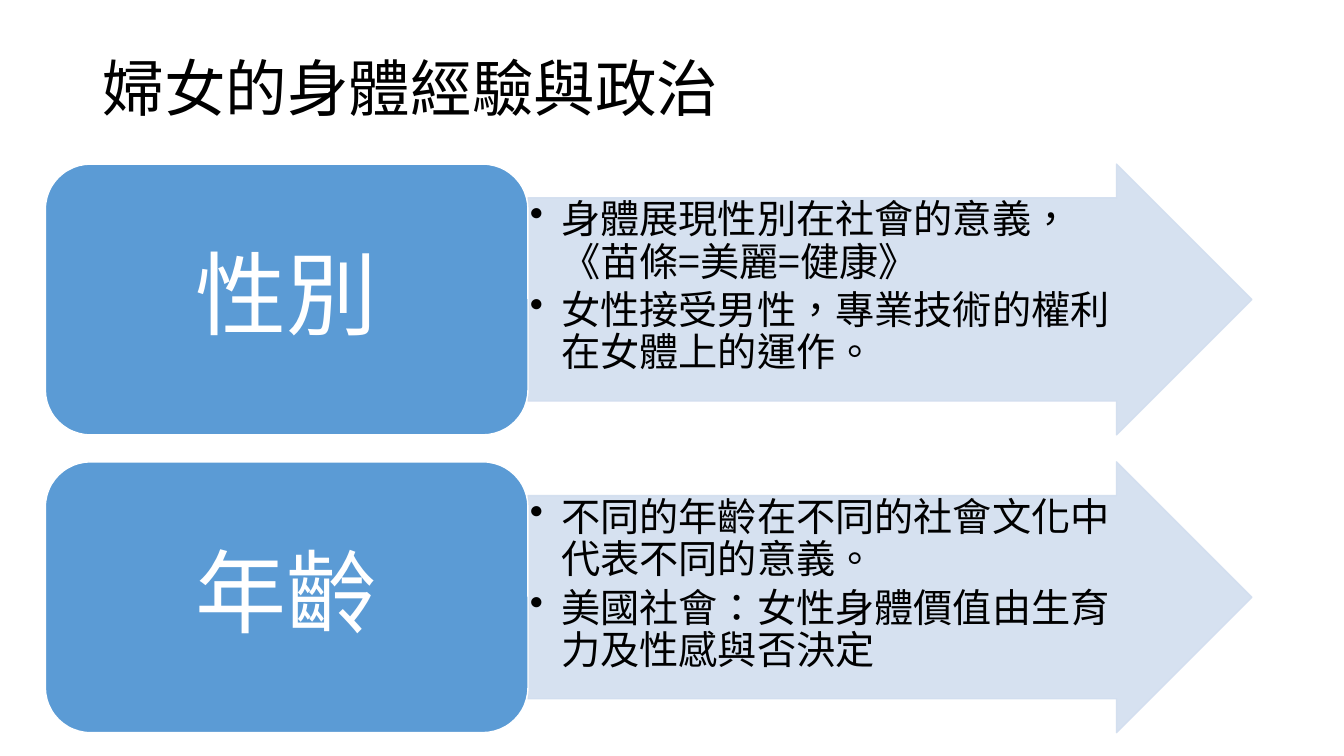
from pptx import Presentation
from pptx import util as u
from pptx.dml import color
from pptx.enum import shapes, text
from pptx.oxml import ns, xmlchemy

Pt = u.Pt
BLACK = color.RGBColor(0x00, 0x00, 0x00)
WHITE = color.RGBColor(0xFF, 0xFF, 0xFF)
BLUE = color.RGBColor(0x5B, 0x9B, 0xD5)
PALE_BLUE = color.RGBColor(0xD2, 0xDE, 0xEF)
FONT = "Noto Sans CJK SC"

TOPICS = [
    ("性別", ["身體展現性別在社會的意義，《苗條=美麗=健康》",
             "女性接受男性，專業技術的權利在女體上的運作。"]),
    ("年齡", ["不同的年齡在不同的社會文化中代表不同的意義。",
             "美國社會：女性身體價值由生育力及性感與否決定"]),
]


def add_child(parent, tag, **attributes):
    """Append an XML element with the given attributes."""
    element = xmlchemy.OxmlElement(tag)
    for name, value in attributes.items():
        element.set(name, value)
    parent.append(element)


def write_text(frame, paragraphs, size, ink=BLACK, align=text.PP_ALIGN.LEFT,
               anchor=text.MSO_ANCHOR.MIDDLE, margins=(7.2, 3.6), after=0, indent=0):
    """Fill a text frame with paragraphs, bulleted when an indent is given."""
    frame.word_wrap = True
    frame.auto_size = text.MSO_AUTO_SIZE.NONE
    frame.vertical_anchor = anchor
    frame.margin_left = frame.margin_right = Pt(margins[0])
    frame.margin_top = frame.margin_bottom = Pt(margins[1])
    for index, words in enumerate(paragraphs):
        paragraph = frame.add_paragraph() if index else frame.paragraphs[0]
        paragraph.alignment = align
        paragraph.line_spacing = 0.9
        paragraph.space_before = Pt(0)
        paragraph.space_after = Pt(after)
        if indent:
            properties = paragraph._p.get_or_add_pPr()
            properties.set("marL", str(Pt(indent)))
            properties.set("indent", str(-Pt(indent)))
            add_child(properties, "a:buChar", char="•")
        run = paragraph.add_run()
        run.text = words
        run.font.size = Pt(size)
        run.font.name = FONT
        run.font.color.rgb = ink
        properties = run._r.get_or_add_rPr()
        properties.set("lang", "zh-TW")
        add_child(properties, "a:ea", typeface=FONT)


def add_block(slide, kind, box, fill, line, opacity=100):
    """Add a filled and outlined preset shape."""
    shape = slide.shapes.add_shape(kind, *map(Pt, box))
    shape.shadow.inherit = False
    shape.fill.solid()
    shape.fill.fore_color.rgb = fill
    shape.line.color.rgb = line
    shape.line.width = Pt(1)
    if opacity < 100:
        for paint in shape._element.spPr.iter(ns.qn("a:srgbClr")):
            add_child(paint, "a:alpha", val=str(opacity * 1000))
    return shape


def add_title(slide, box, words):
    """Place the title placeholder in its box."""
    title = slide.shapes.title
    title.left, title.top, title.width, title.height = map(Pt, box)
    write_text(title.text_frame, [words], 44)


def add_topic(slide, box, label, points):
    """Draw a labelled block with an arrow that carries its points."""
    left, top, width, height = box
    label_width = width * 0.4
    arrow_left, arrow_width = left + label_width, width - label_width
    arrow = add_block(slide, shapes.MSO_SHAPE.RIGHT_ARROW,
                      (arrow_left, top, arrow_width, height), PALE_BLUE, PALE_BLUE, 90)
    arrow.adjustments[0], arrow.adjustments[1] = 0.75, 0.5
    points_box = (arrow_left, top + height / 8, arrow_width - height * 0.375, height * 0.75)
    write_text(slide.shapes.add_textbox(*map(Pt, points_box)).text_frame, points, 28,
               anchor=text.MSO_ANCHOR.TOP, margins=(1.4, 1.4), after=4.2, indent=22.5)
    block = add_block(slide, shapes.MSO_SHAPE.ROUNDED_RECTANGLE,
                      (left, top, label_width, height), BLUE, WHITE)
    write_text(block.text_frame, [label], 65, ink=WHITE,
               align=text.PP_ALIGN.CENTER, margins=(19.5, 9.75))


def main():
    """Build the slide and save it."""
    presentation = Presentation()
    presentation.slide_width, presentation.slide_height = Pt(960), Pt(540)
    slide = presentation.slides.add_slide(presentation.slide_layouts[5])
    add_title(slide, (66, 13, 828, 104.4), "婦女的身體經驗與政治")
    for row, (label, points) in enumerate(TOPICS):
        add_topic(slide, (32.4, 117.2 + row * 212.7, 861.8, 193.4), label, points)
    presentation.save("out.pptx")


if __name__ == "__main__":
    main()
